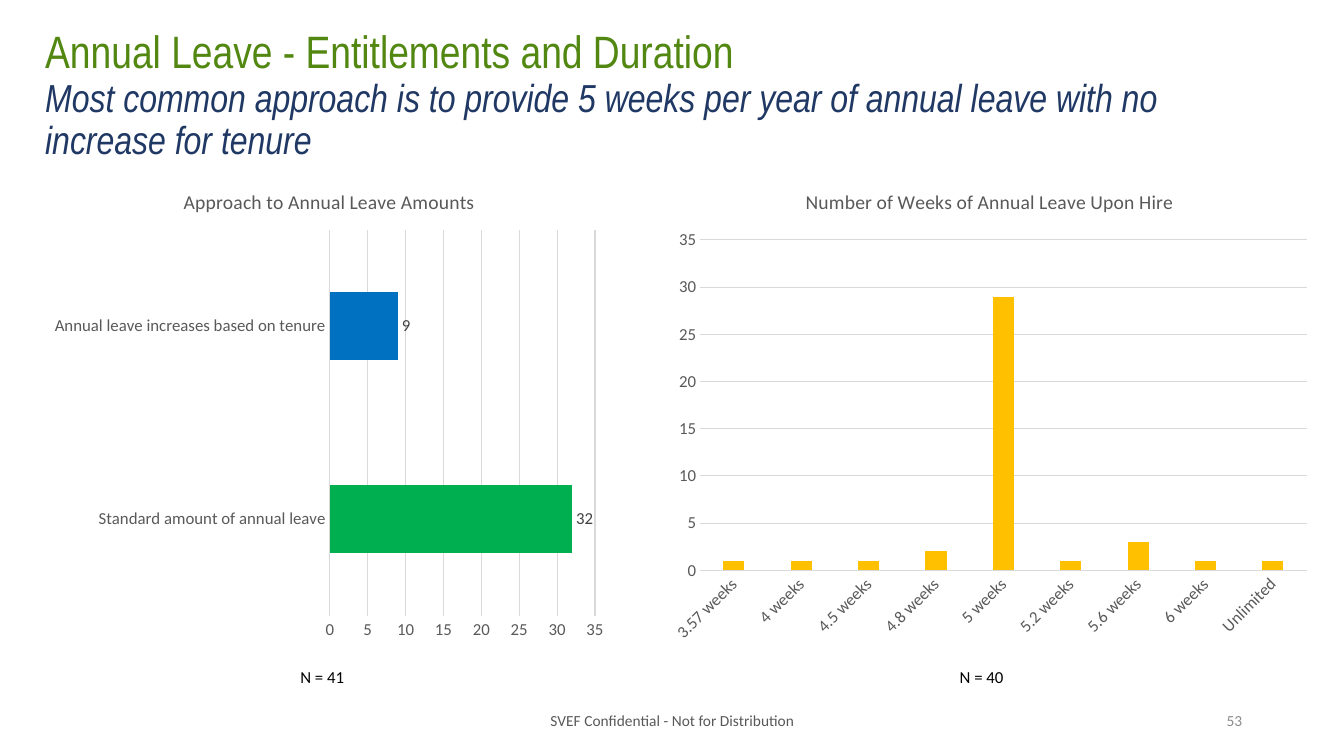
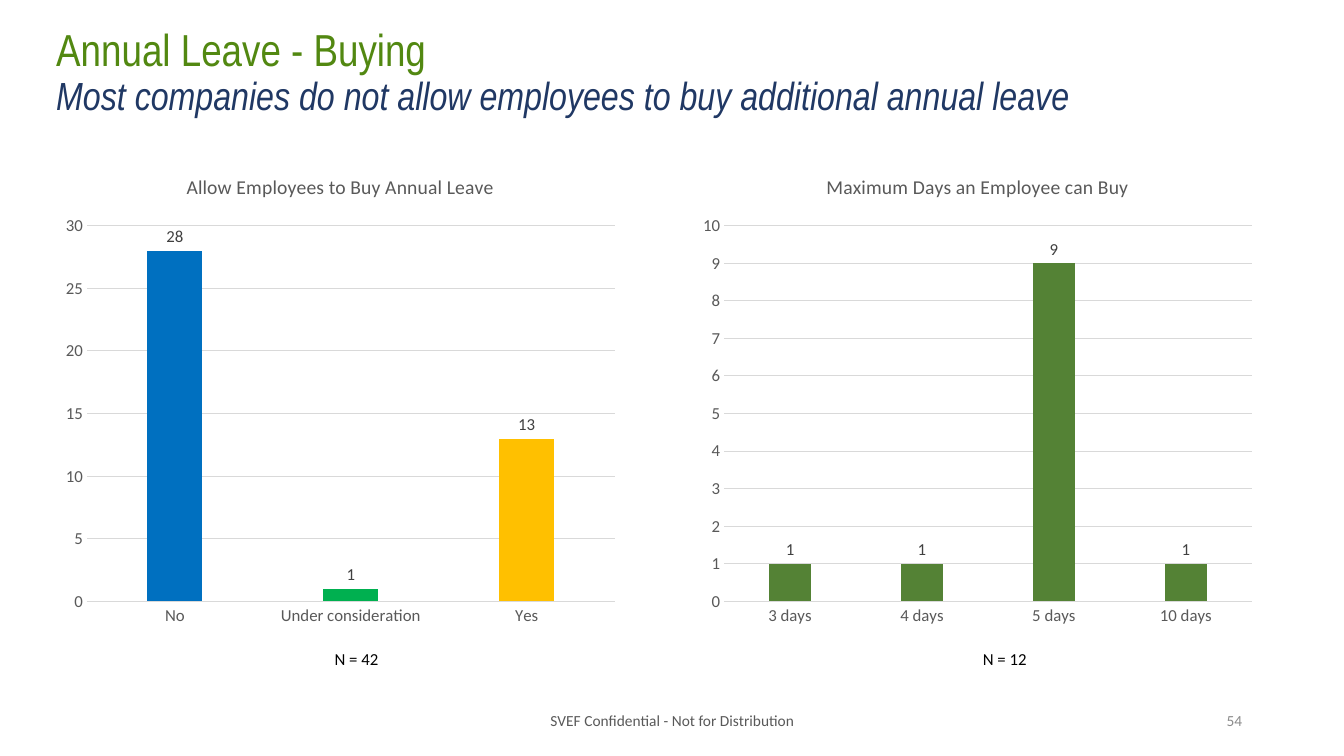
from pptx import Presentation
from pptx.chart.data import CategoryChartData
from pptx.dml.color import RGBColor
from pptx.enum.chart import XL_CHART_TYPE, XL_LABEL_POSITION, XL_TICK_MARK
from pptx.enum.text import MSO_ANCHOR, PP_ALIGN
from pptx.util import Inches, Pt

COLORS = {
    "title": "528811",
    "subtitle": "203864",
    "text": "000000",
    "axis": "595959",
    "label": "404040",
    "grid": "D9D9D9",
    "number": "8C8C8C",
    "blue": "0070C0",
    "green": "00B050",
    "gold": "FFC000",
    "olive": "548235",
}
FOOTER = "SVEF Confidential - Not for Distribution"


def color(name):
    return RGBColor.from_string(COLORS[name])


def style_font(font, size, color_name, name="Calibri", italic=False):
    font.size = Pt(size)
    font.name = name
    font.bold = False
    font.italic = italic
    font.color.rgb = color(color_name)


def write(paragraph, text, size=12, color_name="text", **font_format):
    """Add one formatted run to a paragraph."""
    run = paragraph.add_run()
    run.text = text
    style_font(run.font, size, color_name, **font_format)


class Deck:
    def __init__(self):
        self.presentation = Presentation()
        self.presentation.slide_width = Inches(13.33)
        self.presentation.slide_height = Inches(7.5)
        self.slide = None

    def add_slide(self, number):
        """Start a slide with its footer and slide number."""
        layout = self.presentation.slide_layouts[6]
        self.slide = self.presentation.slides.add_slide(layout)
        footer = self.add_box(4.42, 6.95, 4.5, 0.4, align=PP_ALIGN.CENTER)
        write(footer, FOOTER, size=11, color_name="axis")
        page = self.add_box(9.42, 6.95, 3, 0.4, align=PP_ALIGN.RIGHT)
        write(page, str(number), size=11, color_name="number")

    def add_box(self, left, top, width, height, anchor=MSO_ANCHOR.MIDDLE, align=PP_ALIGN.LEFT):
        """Add a text box and return its first paragraph."""
        shape = self.slide.shapes.add_textbox(
            Inches(left), Inches(top), Inches(width), Inches(height))
        frame = shape.text_frame
        frame.word_wrap = True
        frame.vertical_anchor = anchor
        paragraph = frame.paragraphs[0]
        paragraph.alignment = align
        return paragraph

    def add_title(self, left, top, title, subtitle, sizes=(32, 28)):
        paragraph = self.add_box(left, top, 11.5, 1.45)
        paragraph.line_spacing = 0.9
        write(paragraph, title, sizes[0], "title", name="Arial Narrow")
        paragraph.add_line_break()
        write(paragraph, subtitle, sizes[1], "subtitle", name="Arial Narrow", italic=True)

    def add_sample_size(self, left, top, count):
        paragraph = self.add_box(left, top, 0.78, 0.3, anchor=MSO_ANCHOR.TOP)
        write(paragraph, f"N = {count}")

    def add_bar_chart(self, left, top, width, height, title, values, bar_colors, maximum, step=5,
                      kind=XL_CHART_TYPE.COLUMN_CLUSTERED, gap=219, overlap=-27,
                      labels=True, rotation=None):
        """Add a one-series chart; several bar colours are applied point by point."""
        data = CategoryChartData()
        data.categories = list(values)
        data.add_series("Series 1", list(values.values()))
        chart = self.slide.shapes.add_chart(
            kind, Inches(left), Inches(top), Inches(width), Inches(height), data).chart
        style_font(chart.font, 12, "text")
        chart.has_legend = False
        chart.has_title = True
        write(chart.chart_title.text_frame.paragraphs[0], title, 14, "axis")
        chart.chart_title.include_in_layout = False

        # Axes
        for axis in (chart.category_axis, chart.value_axis):
            axis.major_tick_mark = XL_TICK_MARK.NONE
            axis.minor_tick_mark = XL_TICK_MARK.NONE
            style_font(axis.tick_labels.font, 12, "axis")
        value_axis = chart.value_axis
        value_axis.minimum_scale = 0
        value_axis.maximum_scale = maximum
        value_axis.major_unit = step
        value_axis.format.line.fill.background()
        for line in (chart.category_axis.format.line, value_axis.major_gridlines.format.line):
            line.color.rgb = color("grid")
            line.width = Pt(0.75)
        if rotation is not None:
            text_body = chart.category_axis._element.get_or_add_txPr()
            text_body.bodyPr.set("rot", str(rotation * 60000))

        # Bars
        plot = chart.plots[0]
        plot.vary_by_categories = False
        plot.gap_width = gap
        plot.overlap = overlap
        series = plot.series[0]
        series.invert_if_negative = False
        series.format.fill.solid()
        series.format.fill.fore_color.rgb = color(bar_colors[0])
        if len(bar_colors) > 1:
            for index, name in enumerate(bar_colors):
                fill = series.points[index].format.fill
                fill.solid()
                fill.fore_color.rgb = color(name)
        if labels:
            data_labels = series.data_labels
            data_labels.show_value = True
            data_labels.position = XL_LABEL_POSITION.OUTSIDE_END
            style_font(data_labels.font, 12, "label")


def add_entitlements(deck):
    deck.add_slide(53)
    deck.add_title(
        0.35, 0.23, "Annual Leave - Entitlements and Duration",
        "Most common approach is to provide 5 weeks per year of annual leave "
        "with no increase for tenure", sizes=(32.4, 27.9))
    deck.add_bar_chart(
        0.43, 1.68, 5.67, 4.76, "Approach to Annual Leave Amounts",
        {"Standard amount of annual leave": 32, "Annual leave increases based on tenure": 9},
        ["green", "blue"], maximum=35, kind=XL_CHART_TYPE.BAR_CLUSTERED, gap=182, overlap=0)
    deck.add_bar_chart(
        6.54, 1.68, 6.55, 4.79, "Number of Weeks of Annual Leave Upon Hire",
        {"3.57 weeks": 1, "4 weeks": 1, "4.5 weeks": 1, "4.8 weeks": 2, "5 weeks": 29,
         "5.2 weeks": 1, "5.6 weeks": 3, "6 weeks": 1, "Unlimited": 1},
        ["gold"], maximum=35, labels=False, rotation=-45)
    deck.add_sample_size(2.88, 6.57, 41)
    deck.add_sample_size(9.42, 6.57, 40)


def add_buying(deck):
    deck.add_slide(54)
    deck.add_title(
        0.46, 0, "Annual Leave - Buying",
        "Most companies do not allow employees to buy additional annual leave")
    deck.add_bar_chart(
        0.54, 1.54, 5.67, 4.76, "Allow Employees to Buy Annual Leave",
        {"No": 28, "Under consideration": 1, "Yes": 13},
        ["blue", "green", "gold"], maximum=30)
    deck.add_bar_chart(
        6.86, 1.54, 5.67, 4.76, "Maximum Days an Employee can Buy",
        {"3 days": 1, "4 days": 1, "5 days": 9, "10 days": 1},
        ["olive"], maximum=10, step=1)
    deck.add_sample_size(3.22, 6.39, 42)
    deck.add_sample_size(9.65, 6.39, 12)


def main():
    deck = Deck()
    add_entitlements(deck)
    add_buying(deck)
    deck.presentation.save("out.pptx")


if __name__ == "__main__":
    main()
